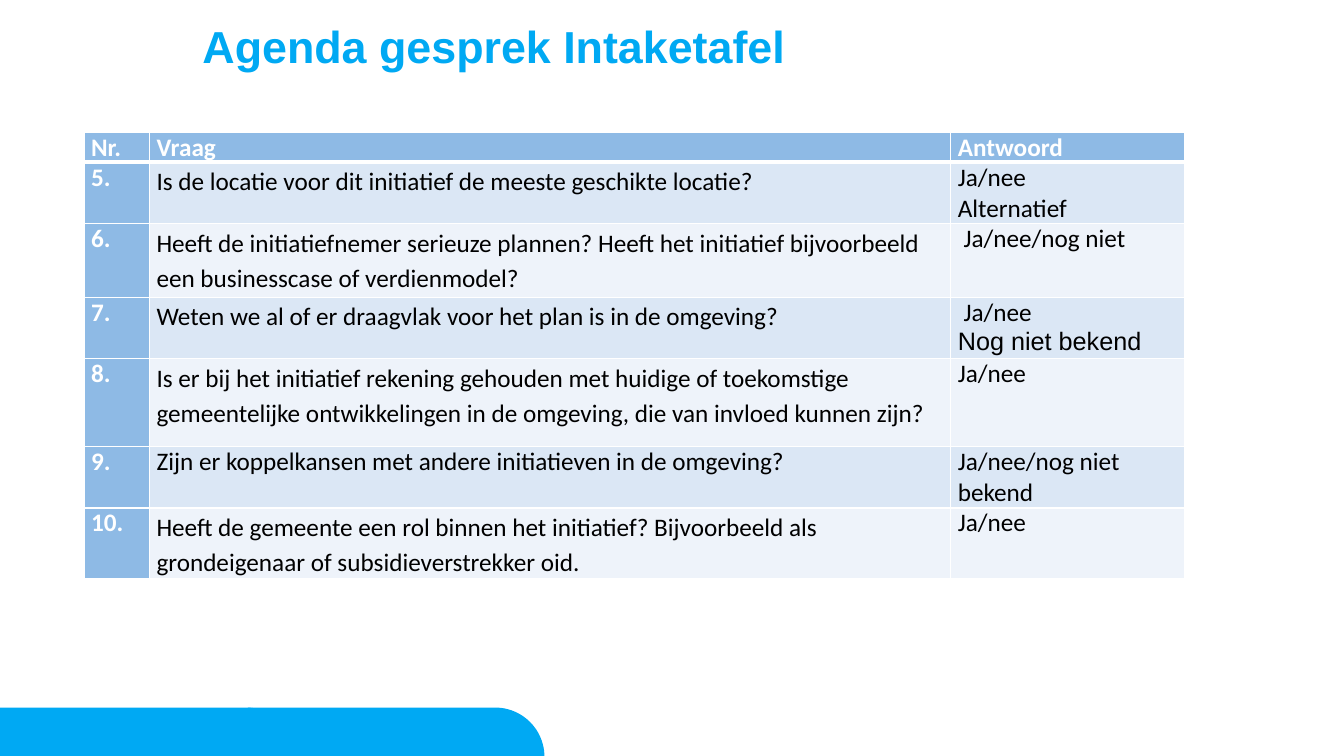
from math import cos, pi, sin

from lxml.etree import SubElement
from pptx import Presentation
from pptx.dml.color import RGBColor
from pptx.oxml import parse_xml
from pptx.oxml.ns import nsdecls, qn
from pptx.util import Inches, Pt

COLS, ROWS = 160, 90
WIDTH, HEIGHT = Inches(13.33), Inches(7.5)
CYAN, WHITE, BLACK = "00A9F3", "FFFFFF", "000000"
HEADER_BLUE, BANDS = "8EBAE5", ("DBE7F5", "EEF3FA")

COL_WIDTHS = (7.8, 95.4, 27.84)
ROW_HEIGHTS = (3.6, 7.32, 8.76, 7.32, 10.44, 7.32, 8.4)
HEADINGS = ("Nr.", "Vraag", "Antwoord")
QUESTIONS = (
    ("Is de locatie voor dit initiatief de meeste geschikte locatie?", 1.15,
     (("Ja/nee", "Calibri"), ("Alternatief", "Calibri"))),
    ("Heeft de initiatiefnemer serieuze plannen? Heeft het initiatief "
     "bijvoorbeeld een businesscase of verdienmodel?", 1.15,
     ((" Ja/nee/nog niet", "Calibri"),)),
    ("Weten we al of er draagvlak voor het plan is in de omgeving?", 1.15,
     ((" Ja/nee", "Calibri"), ("Nog niet bekend", "Arial"))),
    ("Is er bij het initiatief rekening gehouden met huidige of toekomstige "
     "gemeentelijke ontwikkelingen in de omgeving, die van invloed kunnen zijn?",
     1.15, (("Ja/nee", "Calibri"),)),
    ("Zijn er koppelkansen met andere initiatieven in de omgeving?", None,
     (("Ja/nee/nog niet bekend", "Calibri"),)),
    ("Heeft de gemeente een rol binnen het initiatief? Bijvoorbeeld als "
     "grondeigenaar of subsidieverstrekker oid.", 1.15,
     (("Ja/nee", "Calibri"),)),
)


def col(n):
    return int(WIDTH * n / COLS)


def row(n):
    return int(HEIGHT * n / ROWS)


def color(value):
    return RGBColor.from_string(value)


def write(p, text, font="Calibri", size=18, fill=BLACK, bold=False, spacing=None):
    if spacing:
        p.line_spacing = spacing
    r = p.add_run()
    r.text = text
    r.font.name, r.font.size, r.font.bold = font, Pt(size), bold
    r.font.color.rgb = color(fill)


def add_title(s, text):
    tf = s.shapes.add_textbox(col(24.1), row(2.9), col(83.5), row(16.4)).text_frame
    tf.word_wrap = True
    tf.margin_left = tf.margin_top = tf.margin_right = tf.margin_bottom = 0
    write(tf.paragraphs[0], text, font="Arial", size=32, fill=CYAN,
          bold=True, spacing=0.9)


def add_footer_tab(s, left, top=84.24, width=35.3, steps=24):
    bottom = ROWS + 0.1
    radius = bottom - top
    center = left + width - radius
    angles = [pi / 2 * (1 - i / steps) for i in range(steps + 1)]
    arc = [(col(center + radius * cos(a)), row(bottom - radius * sin(a)))
           for a in angles]
    builder = s.shapes.build_freeform(col(left), row(bottom))
    builder.add_line_segments([(col(left), row(top))] + arc, close=True)
    sp = builder.convert_to_shape()
    sp.shadow.inherit = False
    sp.fill.solid()
    sp.fill.fore_color.rgb = color(CYAN)
    sp.line.fill.background()


def set_borders(cell, top=1, bottom=1):
    sides = (("L", 1), ("R", 1), ("T", top), ("B", bottom))
    for i, (side, width) in enumerate(sides):
        ln = parse_xml(f'<a:ln{side} {nsdecls("a")} w="{Pt(width)}"/>')
        fill = SubElement(ln, qn("a:solidFill"))
        SubElement(fill, qn("a:srgbClr"), val=WHITE)
        cell._tc.get_or_add_tcPr().insert(i, ln)


def fill_cell(cell, lines, fill, **borders):
    cell.margin_left = cell.margin_right = Inches(0.07)
    cell.margin_top = cell.margin_bottom = 0
    cell.fill.solid()
    cell.fill.fore_color.rgb = color(fill)
    set_borders(cell, **borders)
    tf = cell.text_frame
    for i, (text, style) in enumerate(lines):
        write(tf.add_paragraph() if i else tf.paragraphs[0], text, **style)


def add_question_table(s, first_number):
    table = s.shapes.add_table(
        len(ROW_HEIGHTS), len(COL_WIDTHS), col(10), row(15.72),
        col(sum(COL_WIDTHS)), row(sum(ROW_HEIGHTS))).table
    table.horz_banding = False
    for column, width in zip(table.columns, COL_WIDTHS):
        column.width = col(width)
    for line, height in zip(table.rows, ROW_HEIGHTS):
        line.height = row(height)

    label = dict(fill=WHITE, bold=True)
    for c, heading in enumerate(HEADINGS):
        fill_cell(table.cell(0, c), [(heading, label)], HEADER_BLUE, bottom=3)
    for i, (question, spacing, answers) in enumerate(QUESTIONS):
        band = BANDS[i % 2]
        contents = (
            ([(f"{first_number + i}.", label)], HEADER_BLUE),
            ([(question, dict(spacing=spacing))], band),
            ([(text, dict(font=font)) for text, font in answers], band),
        )
        for c, (lines, fill) in enumerate(contents):
            fill_cell(table.cell(i + 1, c), lines, fill, top=1 if i else 3)


def main():
    prs = Presentation()
    prs.slide_width, prs.slide_height = WIDTH, HEIGHT
    s = prs.slides.add_slide(prs.slide_layouts[6])
    for left in (-0.1, 29.52):
        add_footer_tab(s, left)
    add_title(s, "Agenda gesprek Intaketafel")
    add_question_table(s, first_number=5)
    prs.save("out.pptx")


if __name__ == "__main__":
    main()
